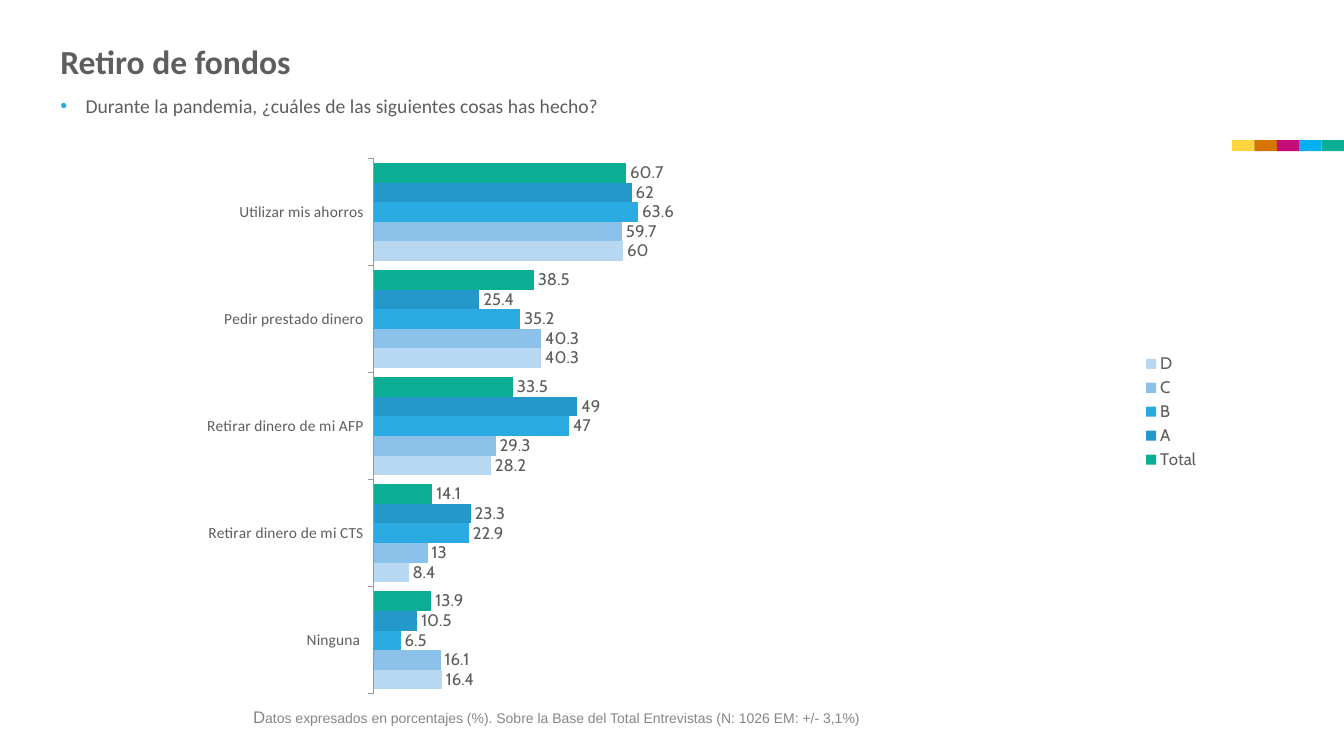
"""Build the slide on withdrawal of funds with its clustered bar chart."""
from dataclasses import dataclass

from lxml import etree
from pptx import Presentation
from pptx.chart.data import CategoryChartData
from pptx.dml.color import RGBColor
from pptx.enum.chart import XL_CHART_TYPE, XL_LABEL_POSITION, XL_LEGEND_POSITION, XL_TICK_LABEL_POSITION, XL_TICK_MARK
from pptx.enum.shapes import MSO_SHAPE
from pptx.enum.text import MSO_ANCHOR, PP_ALIGN
from pptx.oxml import parse_xml
from pptx.oxml.ns import nsdecls, qn
from pptx.util import Inches, Pt

BAR_CLUSTERED = XL_CHART_TYPE.BAR_CLUSTERED
OUTSIDE_END = XL_LABEL_POSITION.OUTSIDE_END
LEGEND_RIGHT = XL_LEGEND_POSITION.RIGHT
LABELS_LOW = XL_TICK_LABEL_POSITION.LOW
TICK_OUT = XL_TICK_MARK.OUTSIDE
TICK_NONE = XL_TICK_MARK.NONE
RECTANGLE = MSO_SHAPE.RECTANGLE
TOP, MIDDLE = MSO_ANCHOR.TOP, MSO_ANCHOR.MIDDLE
LEFT, RIGHT = PP_ALIGN.LEFT, PP_ALIGN.RIGHT

INK = RGBColor(0x5E, 0x5E, 0x5E)
NOTE_GREY = RGBColor(0x86, 0x86, 0x86)
AXIS_GREY = RGBColor(0x9A, 0x9A, 0x9A)
GREEN = RGBColor(0x0B, 0xAD, 0x95)
SKY = RGBColor(0x00, 0xB0, 0xF0)
MAGENTA = RGBColor(0xC6, 0x0C, 0x7B)
ORANGE = RGBColor(0xD4, 0x76, 0x00)
YELLOW = RGBColor(0xFF, 0xD5, 0x3F)
DEEP_BLUE = RGBColor(0x24, 0x98, 0xCB)
BLUE = RGBColor(0x29, 0xAB, 0xE2)
LIGHT_BLUE = RGBColor(0x8C, 0xC2, 0xEA)
PALE_BLUE = RGBColor(0xB8, 0xD8, 0xF2)

SLIDE_WIDTH, SLIDE_HEIGHT = 13.33, 7.5
STRIPE_LEFT, STRIPE_TOP, STRIPE_HEIGHT = 12.22, 1.39, 0.11
STRIPE_COLORS = (YELLOW, ORANGE, MAGENTA, SKY, GREEN)


@dataclass(frozen=True)
class Box:
    left: float
    top: float
    width: float
    height: float

    def lengths(self) -> tuple:
        return tuple(Inches(v) for v in (self.left, self.top, self.width, self.height))


@dataclass(frozen=True)
class Segment:
    name: str
    values: tuple[float, ...]
    color: RGBColor


ACTIONS = ("Utilizar mis ahorros", "Pedir prestado dinero", "Retirar dinero de mi AFP",
           "Retirar dinero de mi CTS", "Ninguna ")
SEGMENTS = (
    Segment("Total", (60.7, 38.5, 33.5, 14.1, 13.9), GREEN),
    Segment("A", (62, 25.4, 49, 23.3, 10.5), DEEP_BLUE),
    Segment("B", (63.6, 35.2, 47, 22.9, 6.5), BLUE),
    Segment("C", (59.7, 40.3, 29.3, 13, 16.1), LIGHT_BLUE),
    Segment("D", (60, 40.3, 28.2, 8.4, 16.4), PALE_BLUE),
)
PLOT_AREA = {"x": 0.387, "y": 0.063, "w": 0.244, "h": 0.924}


def add_text(slide, box: Box, *runs: tuple[str, float], font: str = "Calibri",
             color: RGBColor = INK, bold: bool = False, align=LEFT, anchor=TOP,
             line_spacing: float = 1.0, bullet: RGBColor | None = None) -> None:
    frame = slide.shapes.add_textbox(*box.lengths()).text_frame
    frame.word_wrap = True
    frame.vertical_anchor = anchor
    paragraph = frame.paragraphs[0]
    paragraph.alignment = align
    paragraph.line_spacing = line_spacing
    if bullet is not None:
        props = paragraph._p.get_or_add_pPr()
        props.set("marL", str(Inches(0.25)))
        props.set("indent", str(-Inches(0.25)))
        bullet_color = etree.SubElement(props, qn("a:buClr"))
        etree.SubElement(bullet_color, qn("a:srgbClr")).set("val", str(bullet))
        etree.SubElement(props, qn("a:buFont")).set("typeface", "Arial")
        etree.SubElement(props, qn("a:buChar")).set("char", "•")
    for text, size in runs:
        run = paragraph.add_run()
        run.text = text
        run.font.name = font
        run.font.size = Pt(size)
        run.font.bold = bold
        run.font.color.rgb = color


def add_stripe(slide) -> None:
    width = (SLIDE_WIDTH - STRIPE_LEFT) / len(STRIPE_COLORS)
    for i, color in enumerate(STRIPE_COLORS):
        box = Box(STRIPE_LEFT + i * width, STRIPE_TOP, width, STRIPE_HEIGHT)
        block = slide.shapes.add_shape(RECTANGLE, *box.lengths())
        block.shadow.inherit = False
        block.fill.solid()
        block.fill.fore_color.rgb = color
        block.line.fill.background()


def style_font(font, size: float, name: str) -> None:
    font.size = Pt(size)
    font.name = name
    font.color.rgb = INK


def place_plot(chart) -> None:
    plot_area = chart._chartSpace.chart.plotArea
    for old in plot_area.findall(qn("c:layout")):
        plot_area.remove(old)
    places = "".join(f'<c:{key} val="{value}"/>' for key, value in PLOT_AREA.items())
    plot_area.insert(0, parse_xml(
        f'<c:layout {nsdecls("c")}><c:manualLayout><c:layoutTarget val="inner"/>'
        f'<c:xMode val="edge"/><c:yMode val="edge"/>{places}</c:manualLayout></c:layout>'))


def add_actions_chart(slide, box: Box) -> None:
    data = CategoryChartData()
    data.categories = ACTIONS
    for segment in SEGMENTS:
        data.add_series(segment.name, segment.values)
    chart = slide.shapes.add_chart(BAR_CLUSTERED, *box.lengths(), data).chart
    style_font(chart.font, 12, "Cabin")
    chart.has_title = False
    chart.has_legend = True
    chart.legend.position = LEGEND_RIGHT
    chart.legend.include_in_layout = False
    style_font(chart.legend.font, 12, "Cabin")

    actions = chart.category_axis
    actions.reverse_order = True
    actions.major_tick_mark = TICK_OUT
    actions.minor_tick_mark = TICK_NONE
    actions.tick_label_position = LABELS_LOW
    actions.has_major_gridlines = False
    actions.format.line.color.rgb = AXIS_GREY
    actions.format.line.width = Pt(0.75)
    style_font(actions.tick_labels.font, 11, "Calibri")

    percent = chart.value_axis
    percent.minimum_scale, percent.maximum_scale = 0, 80
    percent.has_major_gridlines = False
    percent.visible = False

    plot = chart.plots[0]
    plot.gap_width = 47
    plot.overlap = 0
    plot.vary_by_categories = False
    for bars, segment in zip(plot.series, SEGMENTS):
        bars.invert_if_negative = False
        bars.format.fill.solid()
        bars.format.fill.fore_color.rgb = segment.color
        labels = bars.data_labels
        labels.show_value = True
        labels.position = OUTSIDE_END
        style_font(labels.font, 12, "Cabin")
    place_plot(chart)


def main() -> None:
    deck = Presentation()
    deck.slide_width, deck.slide_height = Inches(SLIDE_WIDTH), Inches(SLIDE_HEIGHT)
    slide = deck.slides.add_slide(deck.slide_layouts[6])
    add_stripe(slide)
    add_text(slide, Box(0.5, 0.4, 11.5, 0.57), ("Retiro de fondos", 24),
             bold=True, line_spacing=0.9)
    add_text(slide, Box(0.82, 6.96, 7.8, 0.31), ("D", 12),
             ("atos expresados en porcentajes (%). Sobre la Base del Total Entrevistas "
              "(N: 1026 EM: +/- 3,1%)", 10),
             font="Arial", color=NOTE_GREY, align=RIGHT, anchor=MIDDLE)
    add_text(slide, Box(0.5, 0.91, 7.36, 0.42),
             ("Durante la pandemia, ¿cuáles de las siguientes cosas has hecho?", 14),
             line_spacing=0.9, bullet=BLUE)
    add_actions_chart(slide, Box(-1.53, 1.21, 13.53, 5.75))
    deck.save("out.pptx")


if __name__ == "__main__":
    main()
